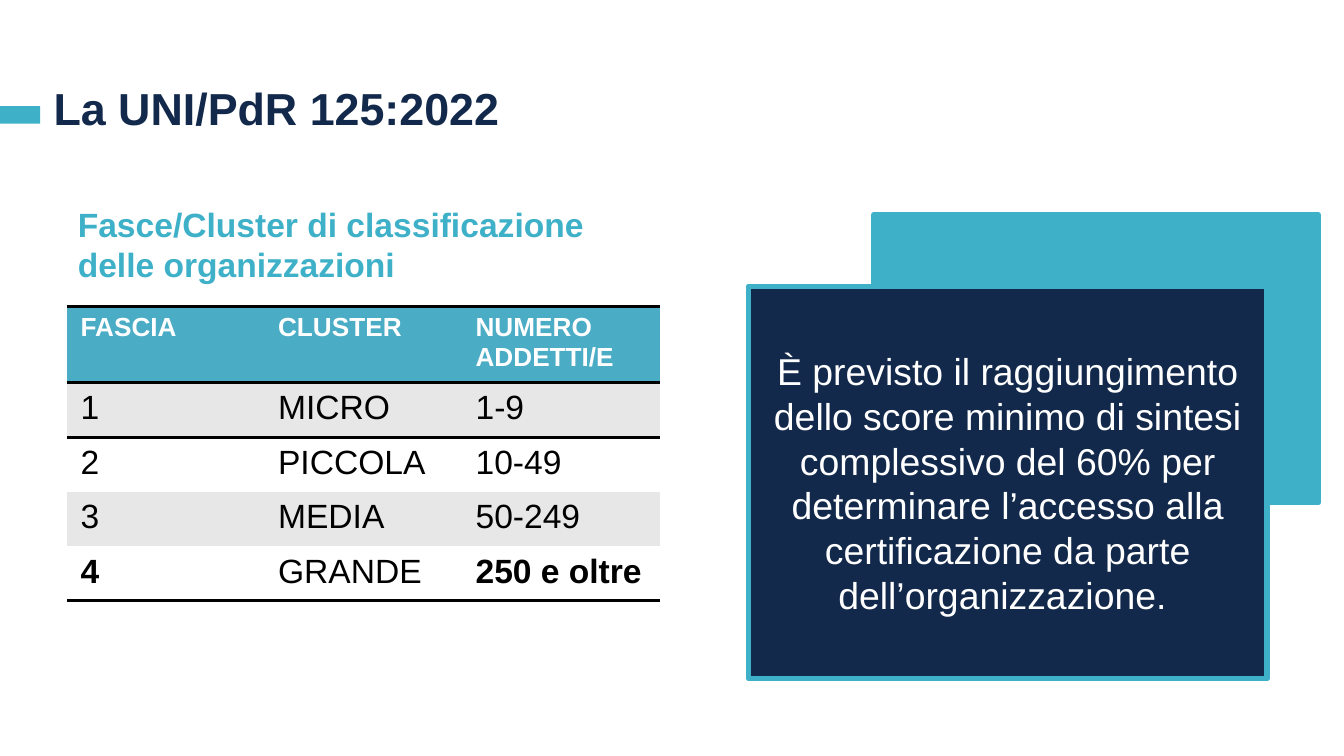
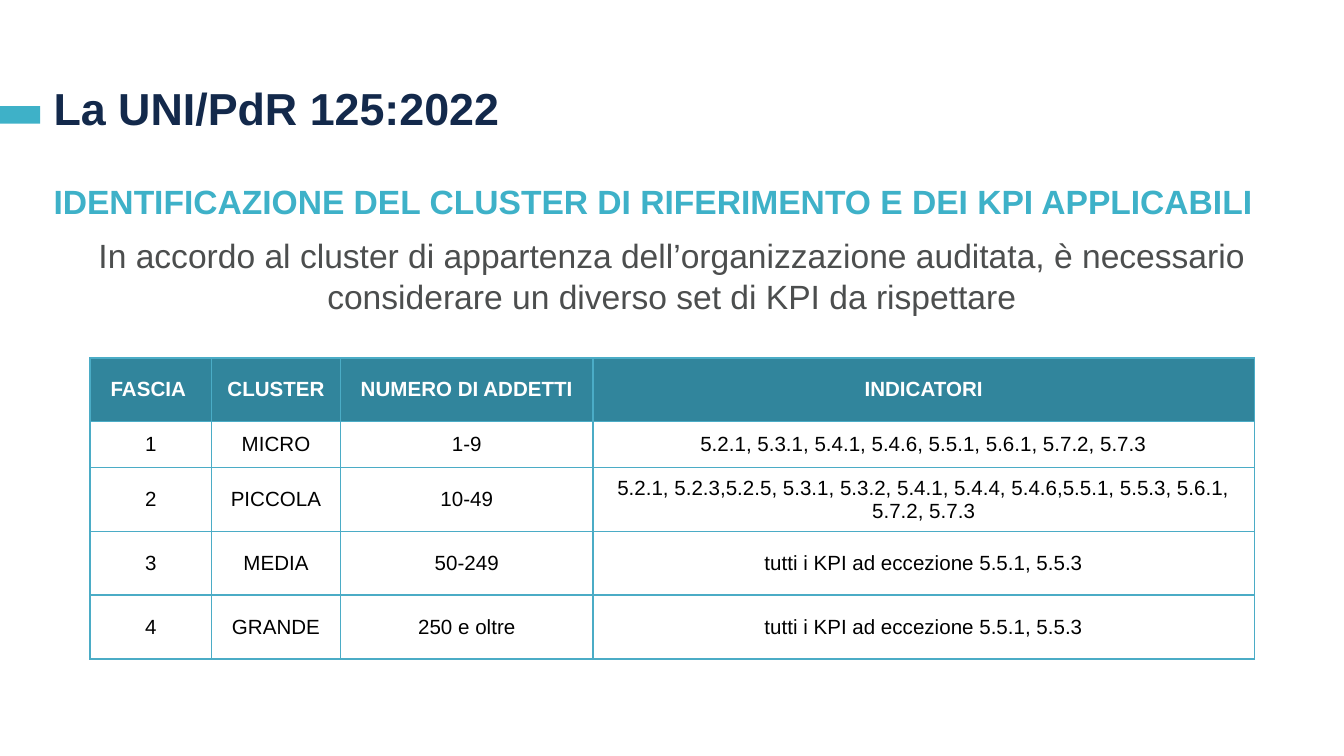
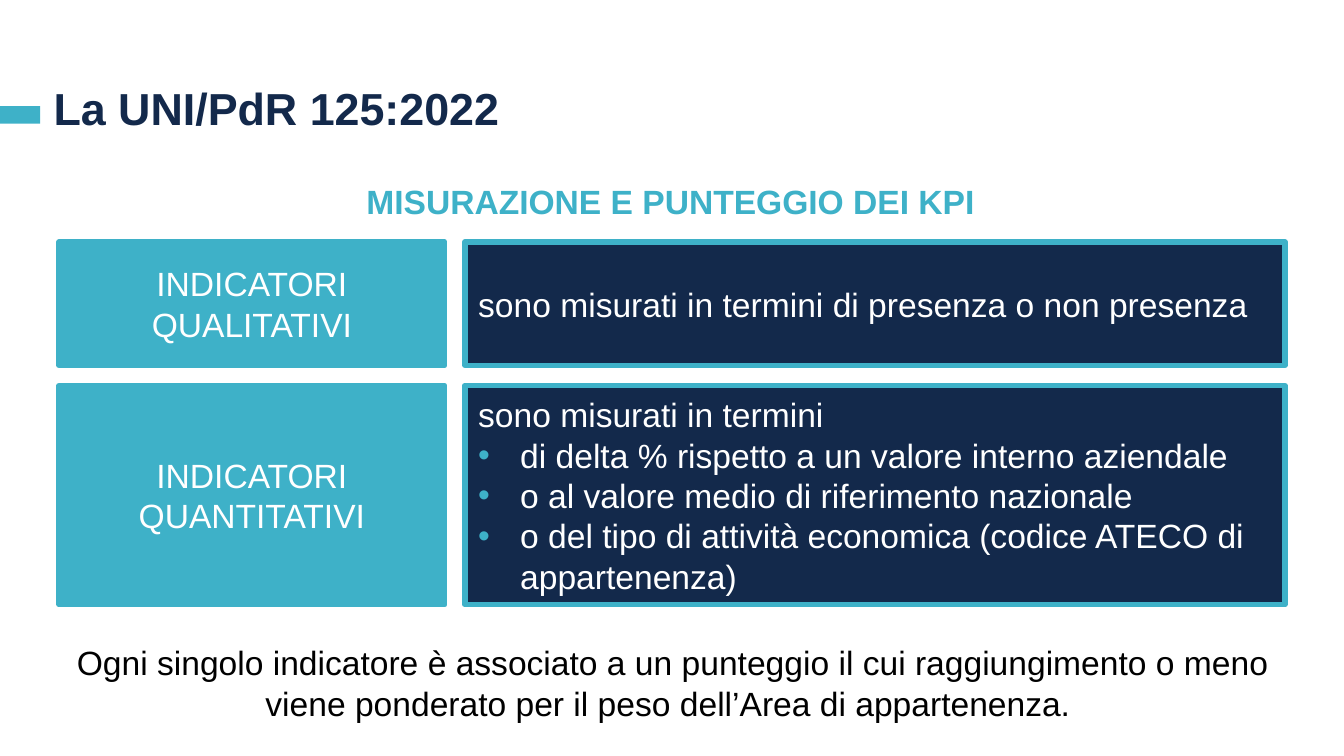
from dataclasses import dataclass
from itertools import product

from lxml.etree import SubElement
from pptx import Presentation
from pptx.dml.color import RGBColor
from pptx.enum.shapes import MSO_SHAPE
from pptx.enum.text import MSO_ANCHOR, PP_ALIGN
from pptx.oxml.ns import qn
from pptx.util import Pt


@dataclass(frozen=True)
class Theme:
    font: str = "Arial"
    aqua: str = "3EB1C8"
    navy: str = "13294B"
    white: str = "FFFFFF"
    black: str = "000000"
    grey: str = "4C4E4E"
    band: str = "E7E7E7"
    table_aqua: str = "4BACC6"
    table_teal: str = "31859C"
    title: int = 24
    statement: int = 20
    body: int = 18
    cluster_head: int = 14
    kpi: int = 11
    outline: int = 3


THEME = Theme()
PLAIN_TABLE = "{2D5ABB26-0587-4C30-8999-92F81FD0307C}"
LEFT, CENTER = PP_ALIGN.LEFT, PP_ALIGN.CENTER
BULLET_INDENT = Pt(22.5)

CLUSTERS = [
    ("FASCIA", "CLUSTER", "NUMERO ADDETTI/E"),
    ("1", "MICRO", "1-9"),
    ("2", "PICCOLA", "10-49"),
    ("3", "MEDIA", "50-249"),
    ("4", "GRANDE", "250 e oltre"),
]
INDICATORS = [
    ("FASCIA ", "CLUSTER", "NUMERO DI ADDETTI", "INDICATORI"),
    ("1", "MICRO", "1-9", "5.2.1, 5.3.1, 5.4.1, 5.4.6, 5.5.1, 5.6.1, 5.7.2, 5.7.3"),
    ("2", "PICCOLA", "10-49",
     "5.2.1, 5.2.3,5.2.5, 5.3.1, 5.3.2, 5.4.1, 5.4.4, 5.4.6,5.5.1, 5.5.3, 5.6.1, 5.7.2, 5.7.3"),
    ("3", "MEDIA", "50-249", "tutti i KPI ad eccezione 5.5.1, 5.5.3"),
    ("4", "GRANDE", "250 e oltre", "tutti i KPI ad eccezione 5.5.1, 5.5.3"),
]
MEASURES = [
    ("INDICATORI QUALITATIVI", 66.2, "sono misurati in termini di presenza o non presenza", ()),
    ("INDICATORI QUANTITATIVI", 117.4, "sono misurati in termini", (
        "di delta % rispetto a un valore interno aziendale",
        "o al valore medio di riferimento nazionale",
        "o del tipo di attività economica (codice ATECO di appartenenza)",
    )),
]


def rgb(colour):
    return RGBColor.from_string(colour)


def points(*lengths):
    return [Pt(length) for length in lengths]


def add_bullet(paragraph):
    properties = paragraph._p.get_or_add_pPr()
    properties.set("marL", str(BULLET_INDENT))
    properties.set("indent", str(-BULLET_INDENT))
    colour = SubElement(properties, qn("a:buClr"))
    SubElement(colour, qn("a:srgbClr"), val=THEME.aqua)
    SubElement(properties, qn("a:buFont"), typeface=THEME.font)
    SubElement(properties, qn("a:buChar"), char="•")


def write(frame, text, size, colour, bold=False, align=LEFT, items=()):
    frame.word_wrap = True
    for index, line in enumerate((text, *items)):
        paragraph = frame.add_paragraph() if index else frame.paragraphs[0]
        paragraph.alignment = align
        if index:
            add_bullet(paragraph)
        run = paragraph.add_run()
        run.text = line
        run.font.name = THEME.font
        run.font.size = Pt(size)
        run.font.bold = bold
        run.font.color.rgb = rgb(colour)


def add_text(slide, place, text, size, colour, bold=False, align=LEFT, anchor=MSO_ANCHOR.TOP):
    frame = slide.shapes.add_textbox(*points(*place)).text_frame
    frame.vertical_anchor = anchor
    write(frame, text, size, colour, bold, align)


def add_panel(slide, place, fill, outlined=True):
    panel = slide.shapes.add_shape(MSO_SHAPE.RECTANGLE, *points(*place))
    panel.shadow.inherit = False
    panel.fill.solid()
    panel.fill.fore_color.rgb = rgb(fill)
    if outlined:
        panel.line.color.rgb = rgb(THEME.aqua)
        panel.line.width = Pt(THEME.outline)
    else:
        panel.line.fill.background()
    panel.text_frame.vertical_anchor = MSO_ANCHOR.MIDDLE
    return panel.text_frame


def add_borders(cell, sides, colour, width):
    properties = cell._tc.get_or_add_tcPr()
    for side in sides:
        line = SubElement(properties, qn(f"a:ln{side}"), w=str(Pt(width)))
        fill = SubElement(line, qn("a:solidFill"))
        SubElement(fill, qn("a:srgbClr"), val=colour)


def add_table(slide, left, top, widths, heights, rows, style_cell):
    place = points(left, top, sum(widths), sum(heights))
    table = slide.shapes.add_table(len(rows), len(widths), *place).table
    table.first_row = table.horz_banding = False
    table._tbl.tblPr.find(qn("a:tableStyleId")).text = PLAIN_TABLE
    for column, width in zip(table.columns, widths):
        column.width = Pt(width)
    for row, height in zip(table.rows, heights):
        row.height = Pt(height)
    for row, column in product(range(len(rows)), range(len(widths))):
        style_cell(table.cell(row, column), row, column, rows[row][column])


def fill_cell(cell, colour):
    cell.fill.solid()
    cell.fill.fore_color.rgb = rgb(colour)


def style_cluster_cell(cell, row, column, text):
    last = len(CLUSTERS) - 1
    sides = {0: "TB", 1: "T", last: "B"}.get(row, "")
    add_borders(cell, sides, THEME.black, 2)
    if row == 0:
        fill_cell(cell, THEME.table_aqua)
        write(cell.text_frame, text, THEME.cluster_head, THEME.white, True)
    else:
        fill_cell(cell, THEME.band if row % 2 else THEME.white)
        bold = row == last and column != 1
        write(cell.text_frame, text, THEME.body, THEME.black, bold)


def style_indicator_cell(cell, row, column, text):
    add_borders(cell, "LRTB", THEME.table_aqua, 1)
    cell.margin_left = cell.margin_right = cell.margin_top = cell.margin_bottom = 0
    cell.vertical_anchor = MSO_ANCHOR.MIDDLE
    header = row == 0
    if header:
        fill_cell(cell, THEME.table_teal)
    else:
        cell.fill.background()
    colour = THEME.white if header else THEME.black
    write(cell.text_frame, text, THEME.kpi, colour, header, CENTER)


def start_slide(deck):
    slide = deck.slides.add_slide(deck.slide_layouts[6])
    add_panel(slide, (-9.4, 56.9, 31, 9.4), THEME.aqua, outlined=False)
    add_text(slide, (21.6, 17.3, 584.6, 58.3), "La UNI/PdR 125:2022",
             THEME.title, THEME.navy, True, anchor=MSO_ANCHOR.BOTTOM)
    return slide


def add_heading(slide, text, align=LEFT):
    add_text(slide, (21.6, 93.6, 675.4, 28.8), text, THEME.body, THEME.aqua, True, align)


def build_clusters(deck):
    slide = start_slide(deck)
    add_text(slide, (34.6, 105.8, 317.5, 58.3),
             "Fasce/Cluster di classificazione delle organizzazioni",
             THEME.body, THEME.aqua, True)
    add_panel(slide, (468, 115.2, 238.3, 154.1), THEME.aqua)
    threshold = add_panel(slide, (401, 153.4, 277.9, 210.2), THEME.navy)
    write(threshold,
          "È previsto il raggiungimento dello score minimo di sintesi complessivo del 60% per "
          "determinare l’accesso alla certificazione da parte dell’organizzazione. ",
          THEME.statement, THEME.white, align=CENTER)
    add_table(slide, 36, 164.2, [105.8] * 3, [29.2] * 5, CLUSTERS, style_cluster_cell)


def build_indicators(deck):
    slide = start_slide(deck)
    add_heading(slide, "IDENTIFICAZIONE DEL CLUSTER DI RIFERIMENTO E DEI KPI APPLICABILI")
    add_text(slide, (23, 122.4, 673.9, 51.1),
             "In accordo al cluster di appartenza dell’organizzazione auditata, è necessario "
             "considerare un diverso set di KPI da rispettare",
             THEME.body, THEME.grey, align=CENTER)
    add_table(slide, 48.2, 191.7, [65.2, 69, 135.4, 354.2],
              [34.2, 24.6, 34.2, 34.2, 34.2], INDICATORS, style_indicator_cell)


def build_measures(deck):
    slide = start_slide(deck)
    add_heading(slide, "MISURAZIONE E PUNTEGGIO DEI KPI", CENTER)
    left, top, gap = 31.7, 129.6, 10.8
    label_width, detail_width = 206.6, 439.2
    for label, height, detail, items in MEASURES:
        label_panel = add_panel(slide, (left, top, label_width, height), THEME.aqua)
        write(label_panel, label, THEME.body, THEME.white, align=CENTER)
        detail_left = left + label_width + gap
        detail_panel = add_panel(slide, (detail_left, top, detail_width, height), THEME.navy)
        write(detail_panel, detail, THEME.body, THEME.white, items=items)
        top += height + gap
    add_text(slide, (31.7, 340.6, 657.4, 51.1),
             "Ogni singolo indicatore è associato a un punteggio il cui raggiungimento o meno "
             "viene ponderato per il peso dell’Area di appartenenza. ",
             THEME.body, THEME.black, align=CENTER)


def main():
    deck = Presentation()
    deck.slide_width, deck.slide_height = points(720, 405)
    build_clusters(deck)
    build_indicators(deck)
    build_measures(deck)
    deck.save("out.pptx")


if __name__ == "__main__":
    main()
